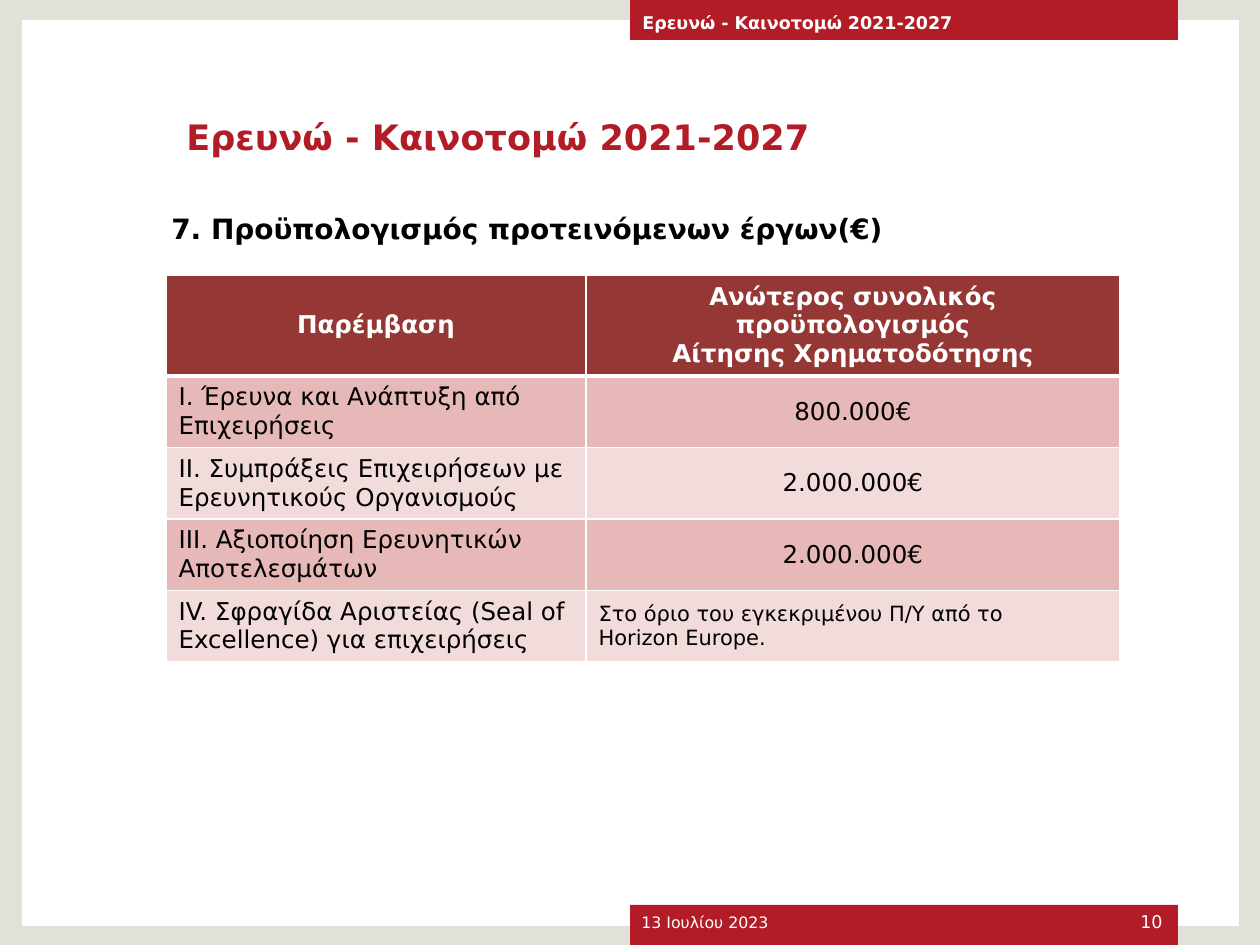
from dataclasses import dataclass

from lxml import etree
from pptx import Presentation, util as u
from pptx.dml.color import RGBColor
from pptx.enum import shapes, text
from pptx.oxml.ns import qn

PX = 914400 // 126
LEFT, CENTER, RIGHT, JUSTIFY = (text.PP_ALIGN.LEFT, text.PP_ALIGN.CENTER,
                                text.PP_ALIGN.RIGHT, text.PP_ALIGN.JUSTIFY)
MIDDLE, BOTTOM = text.MSO_ANCHOR.MIDDLE, text.MSO_ANCHOR.BOTTOM


@dataclass(frozen=True)
class Theme:
    font: str = "DejaVu Sans"
    frame: str = "E1E1D7"
    white: str = "FFFFFF"
    black: str = "000000"
    red: str = "B21C26"
    header: str = "953735"
    bands: tuple = ("E6B9B8", "F2DCDB")
    title: int = 20
    subtitle: int = 16
    table: int = 14
    note: int = 12
    small: int = 10
    date: int = 9


T = Theme()
PROGRAMME = "Ερευνώ - Καινοτομώ 2021-2027"

# left, top, width, height, colour
PANELS = [
    (0, 0, 1260, 945, T.frame),
    (22, 20, 1217, 906, T.white),
    (630, 905, 548, 40, T.red),
    (630, 0, 548, 40, T.red),
]

# words, box, size, colour, bold, alignment, anchor
LABELS = [
    (PROGRAMME, (174, 76, 1017, 120), T.title, T.red, True, LEFT, MIDDLE),
    ("7. Προϋπολογισμός προτεινόμενων έργων(€)", (159, 195, 1048, 56),
     T.subtitle, T.black, True, LEFT, BOTTOM),
    ("13 Ιουλίου 2023", (629, 900, 294, 38), T.date, T.white, False, LEFT, BOTTOM),
    (PROGRAMME, (630, 3, 548, 40), T.small, T.white, True, LEFT, MIDDLE),
    ("10", (1063, 900, 112, 38), T.small, T.white, False, RIGHT, BOTTOM),
]

HEADINGS = [
    ["Παρέμβαση"],
    ["Ανώτερος συνολικός προϋπολογισμός", "Αίτησης Χρηματοδότησης"],
]
# intervention, budget lines, budget size, budget alignment
BUDGETS = [
    ("I. Έρευνα και Ανάπτυξη από Επιχειρήσεις", ["800.000€"], T.table, CENTER),
    ("II. Συμπράξεις Επιχειρήσεων με Ερευνητικούς Οργανισμούς",
     ["2.000.000€"], T.table, CENTER),
    ("III. Αξιοποίηση Ερευνητικών Αποτελεσμάτων", ["2.000.000€"], T.table, CENTER),
    ("IV. Σφραγίδα Αριστείας (Seal of Excellence) για επιχειρήσεις",
     ["Στο όριο του εγκεκριμένου Π/Υ από το", "Horizon Europe."], T.note, JUSTIFY),
]
TABLE_LEFT, TABLE_TOP = 166, 275
COLUMNS = (420, 534)
HEADER_HEIGHT, ROW_HEIGHT = 98, 70


def emu(*lengths):
    return [u.Emu(length * PX) for length in lengths]


def rgb(colour):
    return RGBColor.from_string(colour)


def write(frame, lines, size, colour, bold, align):
    for i, line in enumerate(lines):
        paragraph = frame.add_paragraph() if i else frame.paragraphs[0]
        paragraph.alignment = align
        run = paragraph.add_run()
        run.text = line
        run.font.name, run.font.size, run.font.bold = T.font, u.Pt(size), bold
        run.font.color.rgb = rgb(colour)


def add_panel(slide, left, top, width, height, colour):
    panel = slide.shapes.add_shape(shapes.MSO_SHAPE.RECTANGLE,
                                   *emu(left, top, width, height))
    panel.shadow.inherit = False
    panel.fill.solid()
    panel.fill.fore_color.rgb = rgb(colour)
    panel.line.fill.background()


def add_label(slide, words, box, size, colour, bold, align, anchor):
    frame = slide.shapes.add_textbox(*emu(*box)).text_frame
    frame.word_wrap = True
    frame.vertical_anchor = anchor
    write(frame, [words], size, colour, bold, align)


def set_borders(cell, top, bottom):
    """White borders, with the top and bottom widths in points."""
    properties = cell._tc.get_or_add_tcPr()
    for side, width in (("L", 1), ("R", 1), ("T", top), ("B", bottom)):
        line = etree.SubElement(properties, qn(f"a:ln{side}"), w=str(u.Pt(width)))
        fill = etree.SubElement(line, qn("a:solidFill"))
        etree.SubElement(fill, qn("a:srgbClr"), val=T.white)


def add_budget_table(slide):
    heights = [HEADER_HEIGHT] + [ROW_HEIGHT] * len(BUDGETS)
    table = slide.shapes.add_table(
        len(heights), len(COLUMNS),
        *emu(TABLE_LEFT, TABLE_TOP, sum(COLUMNS), sum(heights))).table
    for column, width in zip(table.columns, emu(*COLUMNS)):
        column.width = width
    for row, height in zip(table.rows, emu(*heights)):
        row.height = height

    def fill_cell(row, column, lines, size, align):
        cell = table.cell(row, column)
        heading = row == 0
        set_borders(cell, 3 if row == 1 else 1, 3 if heading else 1)
        cell.fill.solid()
        cell.fill.fore_color.rgb = rgb(T.header if heading else T.bands[(row - 1) % 2])
        cell.vertical_anchor = MIDDLE
        write(cell.text_frame, lines, size, T.white if heading else T.black,
              heading, align)

    for column, lines in enumerate(HEADINGS):
        fill_cell(0, column, lines, T.table, CENTER)
    for row, (intervention, budget, size, align) in enumerate(BUDGETS, 1):
        fill_cell(row, 0, [intervention], T.table, LEFT)
        fill_cell(row, 1, budget, size, align)


def main():
    deck = Presentation()
    deck.slide_width, deck.slide_height = emu(1260, 945)
    slide = deck.slides.add_slide(deck.slide_layouts[6])
    for panel in PANELS:
        add_panel(slide, *panel)
    for label in LABELS:
        add_label(slide, *label)
    add_budget_table(slide)
    deck.save("out.pptx")


if __name__ == "__main__":
    main()
